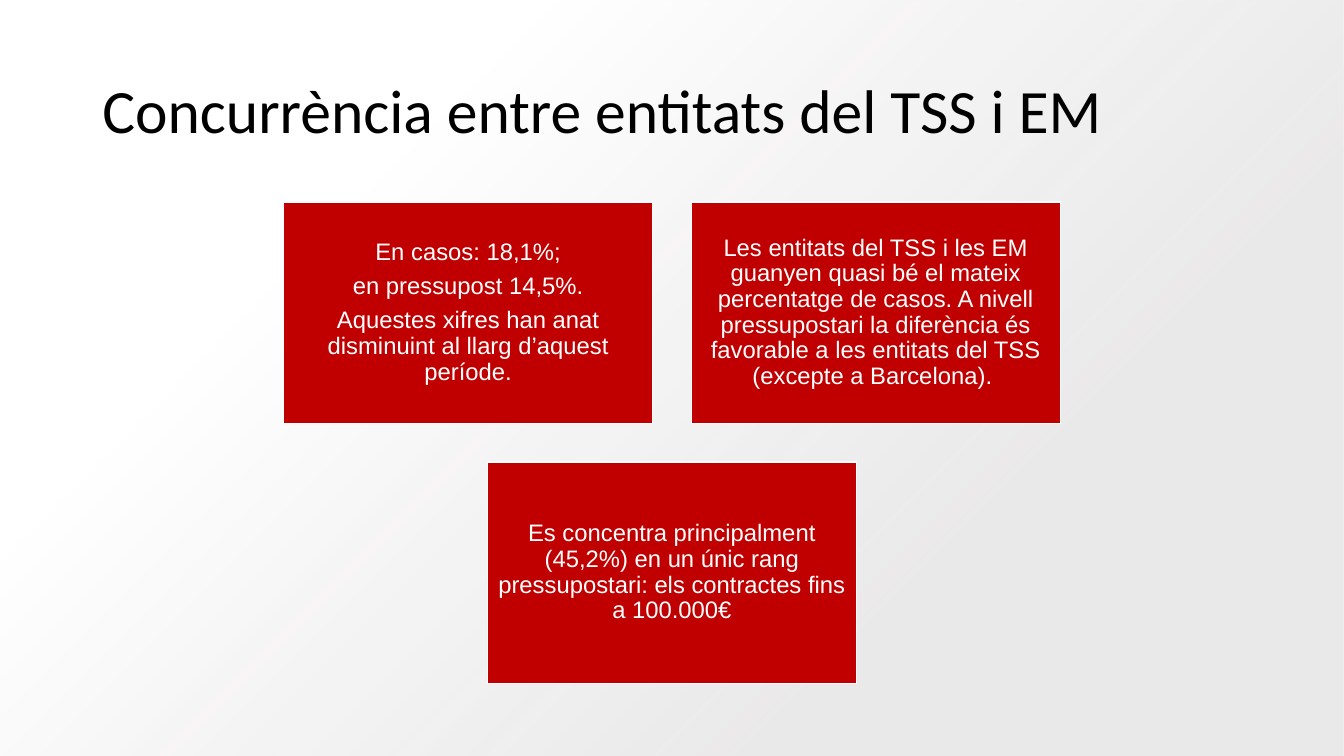
from dataclasses import dataclass

from lxml.etree import fromstring
from pptx import Presentation
from pptx.dml.color import RGBColor
from pptx.enum.shapes import MSO_SHAPE
from pptx.enum.text import MSO_ANCHOR, PP_ALIGN
from pptx.util import Cm, Pt

# Content
TITLE = ["Concurrència entre entitats del TSS i EM"]
ROWS = [
    [
        [
            "En casos: 18,1%;",
            "en pressupost 14,5%.",
            "Aquestes xifres han anat disminuint al llarg d’aquest període.",
        ],
        [
            "Les entitats del TSS i les EM guanyen quasi bé el mateix percentatge "
            "de casos. A nivell pressupostari la diferència és favorable a les "
            "entitats del TSS (excepte a Barcelona). "
        ],
    ],
    [
        [
            "Es concentra principalment (45,2%) en un únic rang pressupostari: "
            "els contractes fins a 100.000€"
        ],
    ],
]


@dataclass
class Theme:
    red: str = "C00000"
    white: str = "FFFFFF"
    black: str = "000000"
    grey: str = "E7E6E6"
    title_font: str = "Calibri"
    body_font: str = "Arial"
    title_size: int = 44
    body_size: int = 17


theme = Theme()

# Layout, in centimetres
SLIDE_WIDTH, SLIDE_HEIGHT = 33.87, 19.05
CARD_WIDTH, CARD_HEIGHT, GAP = 9.3, 5.58, 0.97
CARDS_TOP = 5.09

GRADIENT = f"""
<a:gradFill xmlns:a="http://schemas.openxmlformats.org/drawingml/2006/main">
  <a:gsLst>
    <a:gs pos="28000"><a:srgbClr val="{theme.grey}"><a:alpha val="84000"/></a:srgbClr></a:gs>
    <a:gs pos="74000"><a:srgbClr val="{theme.white}"/></a:gs>
  </a:gsLst>
  <a:path path="circle"><a:fillToRect l="100000" t="100000"/></a:path>
</a:gradFill>"""


def write(shape, paragraphs, *, font, size, color, align, inset=None, after=0):
    frame = shape.text_frame
    frame.word_wrap = True
    frame.vertical_anchor = MSO_ANCHOR.MIDDLE
    if inset is not None:
        frame.margin_left = frame.margin_right = Cm(inset)
        frame.margin_top = frame.margin_bottom = Cm(inset)
    for index, text in enumerate(paragraphs):
        para = frame.add_paragraph() if index else frame.paragraphs[0]
        para.alignment = align
        para.line_spacing = 0.9
        para.space_after = Pt(after)
        span = para.add_run()
        span.text = text
        span.font.name = font
        span.font.size = Pt(size)
        span.font.color.rgb = RGBColor.from_string(color)


def add_rectangle(page, left, top, width, height):
    box = page.shapes.add_shape(
        MSO_SHAPE.RECTANGLE, Cm(left), Cm(top), Cm(width), Cm(height))
    box.shadow.inherit = False
    return box


deck = Presentation()
deck.slide_width, deck.slide_height = Cm(SLIDE_WIDTH), Cm(SLIDE_HEIGHT)
page = deck.slides.add_slide(deck.slide_layouts[6])

# Background gradient, spreading from the bottom right corner
backdrop = add_rectangle(page, 0, 0, SLIDE_WIDTH, SLIDE_HEIGHT)
backdrop.line.fill.background()
backdrop.fill.solid()
solid = backdrop.fill._xPr.solidFill
solid.getparent().replace(solid, fromstring(GRADIENT))

# Title
heading = page.shapes.add_textbox(Cm(2.33), Cm(1.01), Cm(29.21), Cm(3.68))
write(heading, TITLE, font=theme.title_font, size=theme.title_size,
      color=theme.black, align=PP_ALIGN.LEFT)

# Cards, each row centred on the slide
for row_index, row in enumerate(ROWS):
    row_width = len(row) * CARD_WIDTH + (len(row) - 1) * GAP
    row_left = (SLIDE_WIDTH - row_width) / 2
    top = CARDS_TOP + row_index * (CARD_HEIGHT + GAP)
    for column, paragraphs in enumerate(row):
        card = add_rectangle(page, row_left + column * (CARD_WIDTH + GAP), top,
                             CARD_WIDTH, CARD_HEIGHT)
        card.fill.solid()
        card.fill.fore_color.rgb = RGBColor.from_string(theme.red)
        card.line.color.rgb = RGBColor.from_string(theme.white)
        card.line.width = Pt(1)
        write(card, paragraphs, font=theme.body_font, size=theme.body_size,
              color=theme.white, align=PP_ALIGN.CENTER, inset=0.17, after=6)

deck.save("out.pptx")
